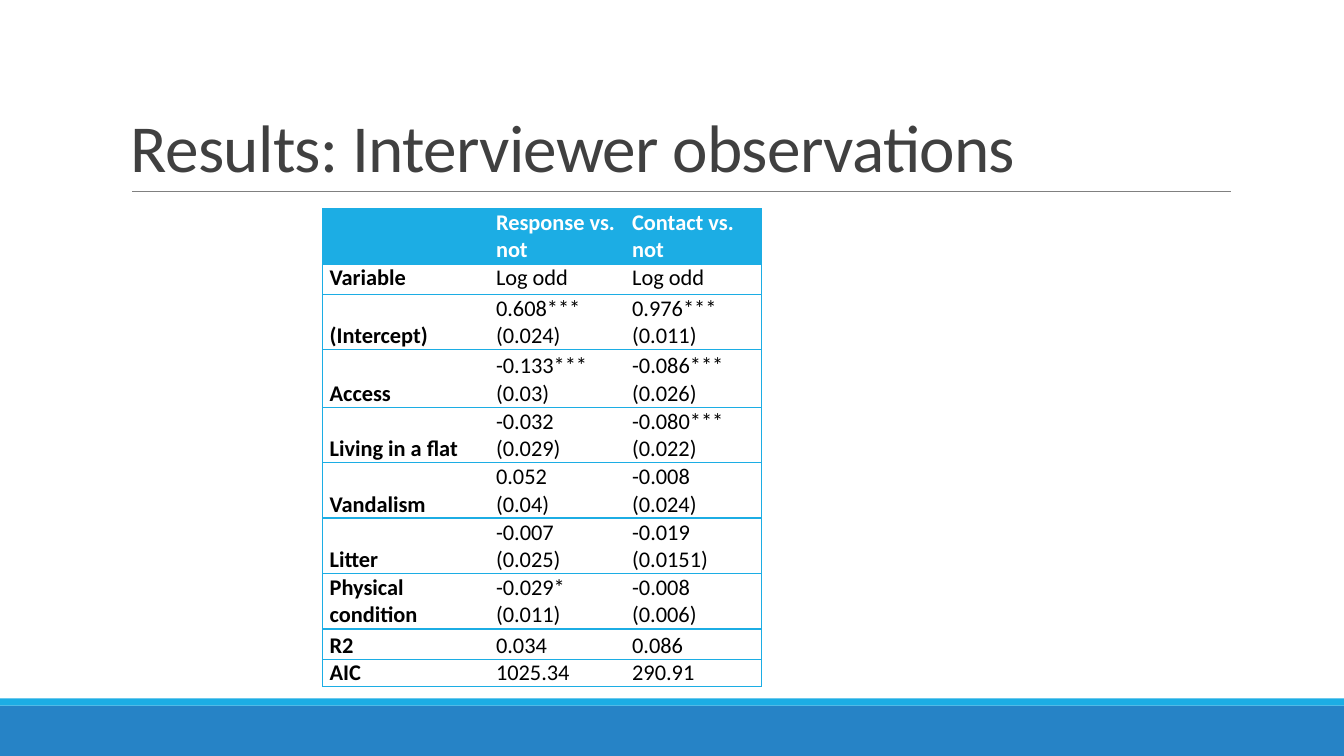
from pptx import Presentation
from pptx.dml.color import RGBColor
from pptx.enum.shapes import MSO_CONNECTOR, MSO_SHAPE
from pptx.enum.text import MSO_ANCHOR
from pptx.oxml.ns import qn
from pptx.util import Inches, Pt
from lxml import etree

RECTANGLE = MSO_SHAPE.RECTANGLE
STRAIGHT = MSO_CONNECTOR.STRAIGHT
TOP, BOTTOM = MSO_ANCHOR.TOP, MSO_ANCHOR.BOTTOM

FONT = "Calibri"
CYAN, BLUE, GRAY, DARK = "1CADE4", "2683C6", "808080", "404040"
WHITE, BLACK = "FFFFFF", "000000"

COLUMN_WIDTHS = [1.65, 1.35, 1.35]
ROW_HEIGHTS = [0.55, 0.3, 0.55, 0.57, 0.55, 0.55, 0.55, 0.55, 0.3, 0.27]
RESULTS = [
    ["", "Response vs. not", "Contact vs. not"],
    ["Variable", "Log odd", "Log odd"],
    ["(Intercept)", "0.608***\n(0.024)", "0.976***\n(0.011)"],
    ["Access", "-0.133***\n(0.03)", "-0.086***\n(0.026)"],
    ["Living in a flat", "-0.032\n(0.029)", "-0.080***\n(0.022)"],
    ["Vandalism", "0.052\n(0.04)", "-0.008\n(0.024)"],
    ["Litter", "-0.007\n(0.025)", "-0.019\n(0.0151)"],
    ["Physical condition", "-0.029*\n(0.011)", "-0.008\n(0.006)"],
    ["R2", "0.034", "0.086"],
    ["AIC", "1025.34", "290.91"],
]


def color(value):
    return RGBColor.from_string(value)


def style_font(font, size, value, bold=False):
    font.name = FONT
    font.size = Pt(size)
    font.bold = bold
    font.color.rgb = color(value)


def add_bar(slide, top, height, fill):
    bar = slide.shapes.add_shape(
        RECTANGLE, 0, Inches(top), Inches(13.33), Inches(height))
    bar.shadow.inherit = False
    bar.fill.solid()
    bar.fill.fore_color.rgb = color(fill)
    bar.line.fill.background()


def add_rule(slide, left, right, top):
    rule = slide.shapes.add_connector(
        STRAIGHT, Inches(left), Inches(top), Inches(right), Inches(top))
    rule.line.color.rgb = color(GRAY)
    rule.line.width = Pt(0.5)
    etree.SubElement(rule._element.spPr, qn("a:effectLst"))


def add_title(slide, text):
    box = slide.shapes.add_textbox(
        Inches(1.2), Inches(0.31), Inches(11), Inches(1.59))
    frame = box.text_frame
    frame.word_wrap = True
    frame.vertical_anchor = BOTTOM
    paragraph = frame.paragraphs[0]
    paragraph.line_spacing = 0.85
    style_font(paragraph.font, 48, DARK)
    run = paragraph.add_run()
    run.text = text
    run._r.get_or_add_rPr().set("spc", "-50")


def set_borders(cell, visible_sides):
    properties = cell._tc.get_or_add_tcPr()
    for side in "LRTB":
        line = etree.SubElement(properties, qn(f"a:ln{side}"), w=str(Pt(1)))
        if side in visible_sides:
            fill = etree.SubElement(line, qn("a:solidFill"))
            etree.SubElement(fill, qn("a:srgbClr"), val=CYAN)
        else:
            etree.SubElement(line, qn("a:noFill"))


def fill_cell(cell, text, row, column):
    header = row == 0
    last_column = len(COLUMN_WIDTHS) - 1
    sides = "TB" + {0: "L", last_column: "R"}.get(column, "")
    set_borders(cell, sides)
    if header:
        cell.fill.solid()
        cell.fill.fore_color.rgb = color(CYAN)
    else:
        cell.fill.background()
    cell.margin_left = cell.margin_right = Inches(0.07)
    cell.margin_top = cell.margin_bottom = 0
    cell.vertical_anchor = TOP if row < 2 else BOTTOM
    cell.text = text
    for paragraph in cell.text_frame.paragraphs:
        style_font(paragraph.font, 16, WHITE if header else BLACK,
                   bold=header or column == 0)


def add_results_table(slide):
    table = slide.shapes.add_table(
        len(RESULTS), len(COLUMN_WIDTHS), Inches(3.2), Inches(2.07),
        Inches(sum(COLUMN_WIDTHS)), Inches(sum(ROW_HEIGHTS))).table
    table.horz_banding = False
    for column, width in zip(table.columns, COLUMN_WIDTHS):
        column.width = Inches(width)
    for row, height in zip(table.rows, ROW_HEIGHTS):
        row.height = Inches(height)
    for row, texts in enumerate(RESULTS):
        for column, text in enumerate(texts):
            fill_cell(table.cell(row, column), text, row, column)


def main():
    presentation = Presentation()
    presentation.slide_width = Inches(13.33)
    presentation.slide_height = Inches(7.5)
    slide = presentation.slides.add_slide(presentation.slide_layouts[6])

    # Footer bars and title rule
    add_bar(slide, 7, 0.5, BLUE)
    add_bar(slide, 6.93, 0.07, CYAN)
    add_rule(slide, 1.31, 12.21, 1.9)

    # Title and regression results
    add_title(slide, "Results: Interviewer observations")
    add_results_table(slide)

    presentation.save("out.pptx")


if __name__ == "__main__":
    main()
